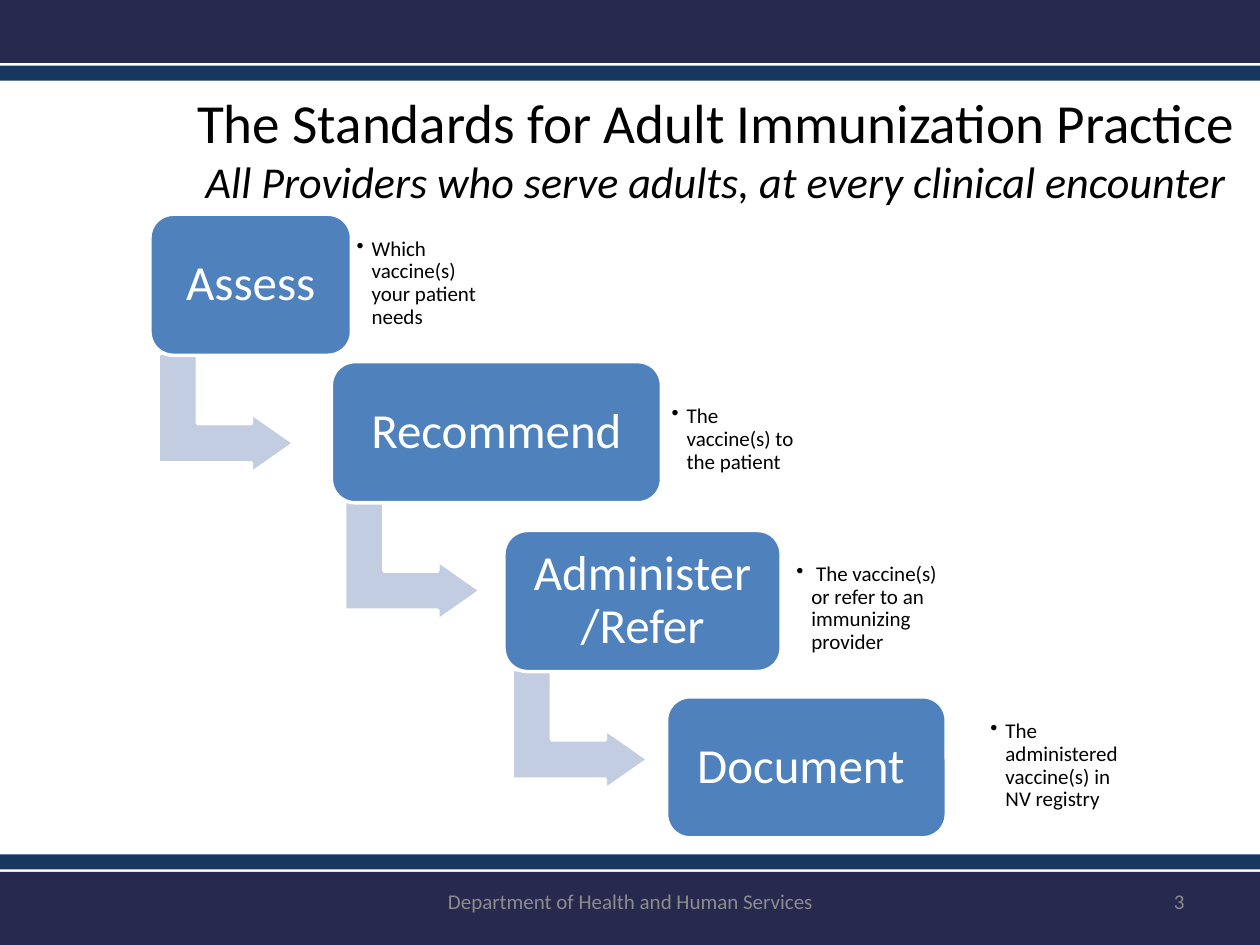
import pptx
import pptx.dml.color
import pptx.enum.shapes
import pptx.enum.text
import pptx.oxml.ns
import pptx.util
from lxml import etree
from pptx.util import Inches

COLORS = {
    "navy": "28294E",
    "blue": "17375E",
    "step": "4F81BD",
    "arrow": "C2CDE1",
    "white": "FFFFFF",
    "black": "000000",
    "gray": "8C8C8C",
}
ALIGN = pptx.enum.text.PP_ALIGN
SHAPES = pptx.enum.shapes.MSO_SHAPE
STEP_HEIGHT = 1.12

# Step label, box left, top, width, arrow left (None for the last step)
STEPS = [
    ("Assess", 1.19, 1.70, 1.60, 1.32),
    ("Recommend", 2.63, 2.87, 2.62, 2.80),
    ("Administer/Refer", 4.00, 4.21, 2.20, 4.13),
    ("Document ", 5.29, 5.53, 2.22, None),
]
# Detail text, left, top, width, inset
DETAILS = [
    ("Which vaccine(s) your patient needs", 2.76, 1.80, 1.16, 0.07),
    ("The vaccine(s) to the patient", 5.26, 3.04, 1.16, 0.07),
    (" The vaccine(s) or refer to an immunizing provider", 6.27, 4.38, 1.26, 0.05),
    ("The administered vaccine(s) in NV registry", 7.79, 5.63, 1.16, 0.07),
]
# Bar top, width, height, color
BARS = [
    (0, 10, 0.5, "navy"),
    (0.52, 10.01, 0.12, "blue"),
    (6.92, 10, 0.59, "navy"),
    (6.78, 10.01, 0.12, "blue"),
]


def rgb(name):
    return pptx.dml.color.RGBColor.from_string(COLORS[name])


def add_bullet(paragraph, indent=0.12):
    properties = paragraph._p.get_or_add_pPr()
    properties.set("marL", str(Inches(indent)))
    properties.set("indent", str(-Inches(indent)))
    bullet = etree.SubElement(properties, pptx.oxml.ns.qn("a:buChar"))
    bullet.set("char", "•")


def write_text(shape, text, size=12, color="black", align=ALIGN.LEFT,
               inset=0.1, spacing=None, bullet=False):
    frame = shape.text_frame
    frame.word_wrap = True
    frame.vertical_anchor = pptx.enum.text.MSO_ANCHOR.MIDDLE
    frame.margin_left = frame.margin_right = Inches(inset)
    frame.margin_top = frame.margin_bottom = Inches(inset)
    paragraph = frame.paragraphs[0]
    paragraph.alignment = align
    if spacing:
        paragraph.line_spacing = spacing
    if bullet:
        add_bullet(paragraph)
    run = paragraph.add_run()
    run.text = text
    format_run(run, size, color)
    return paragraph


def format_run(run, size, color, italic=False):
    run.font.name = "Calibri"
    run.font.size = pptx.util.Pt(size)
    run.font.color.rgb = rgb(color)
    run.font.italic = italic


class SlideBuilder:
    def __init__(self, slide):
        self.slide = slide

    def shape(self, kind, left, top, width, height, fill, outlined=False):
        shape = self.slide.shapes.add_shape(
            kind, Inches(left), Inches(top), Inches(width), Inches(height))
        shape.shadow.inherit = False
        shape.fill.solid()
        shape.fill.fore_color.rgb = rgb(fill)
        if outlined:
            shape.line.color.rgb = rgb("white")
            shape.line.width = pptx.util.Pt(2)
        else:
            shape.line.fill.background()
        return shape

    def title(self, text, subtitle):
        title = self.slide.shapes.title
        title.left, title.top = Inches(1.18), Inches(0.69)
        title.width, title.height = Inches(9), Inches(0.96)
        paragraph = write_text(title, text, size=31.5, align=ALIGN.CENTER, inset=0)
        paragraph.add_line_break()
        run = paragraph.add_run()
        run.text = subtitle
        format_run(run, 25.2, "black", italic=True)

    def text(self, text, left, top, width, height, **text_format):
        box = self.slide.shapes.add_textbox(
            Inches(left), Inches(top), Inches(width), Inches(height))
        write_text(box, text, **text_format)

    def step(self, label, left, top, width):
        box = self.shape(SHAPES.ROUNDED_RECTANGLE, left, top, width,
                         STEP_HEIGHT, "step", outlined=True)
        box.adjustments[0] = 0.167
        write_text(box, label, size=28, color="white", align=ALIGN.CENTER,
                   inset=0.12, spacing=0.9)

    def arrow(self, left, top):
        arrow = self.shape(SHAPES.BENT_UP_ARROW, left, top, 0.95, 1.08,
                           "arrow", outlined=True)
        arrow.rotation = 90
        for index, value in enumerate((0.328, 0.25, 0.358)):
            arrow.adjustments[index] = value


def main():
    presentation = pptx.Presentation()
    presentation.slide_width = Inches(10)
    presentation.slide_height = Inches(7.5)
    title_only = presentation.slide_layouts[5]
    builder = SlideBuilder(presentation.slides.add_slide(title_only))

    for top, width, height, color in BARS:
        builder.shape(SHAPES.RECTANGLE, 0, top, width, height, color)
    builder.title("The Standards for Adult Immunization Practice",
                  "All Providers who serve adults, at every clinical encounter")
    builder.text("Department of Health and Human Services", 3.42, 6.95, 3.17, 0.4,
                 color="gray", align=ALIGN.CENTER)
    builder.text("3", 7.17, 6.95, 2.33, 0.4, color="gray", align=ALIGN.RIGHT)

    for (label, left, top, width, arrow_left), detail in zip(STEPS, DETAILS):
        if arrow_left is not None:
            builder.arrow(arrow_left, top + 1.04)
        builder.step(label, left, top, width)
        text, detail_left, detail_top, detail_width, inset = detail
        builder.text(text, detail_left, detail_top, detail_width, 0.9,
                     inset=inset, spacing=0.9, bullet=True)

    presentation.save("out.pptx")


if __name__ == "__main__":
    main()
